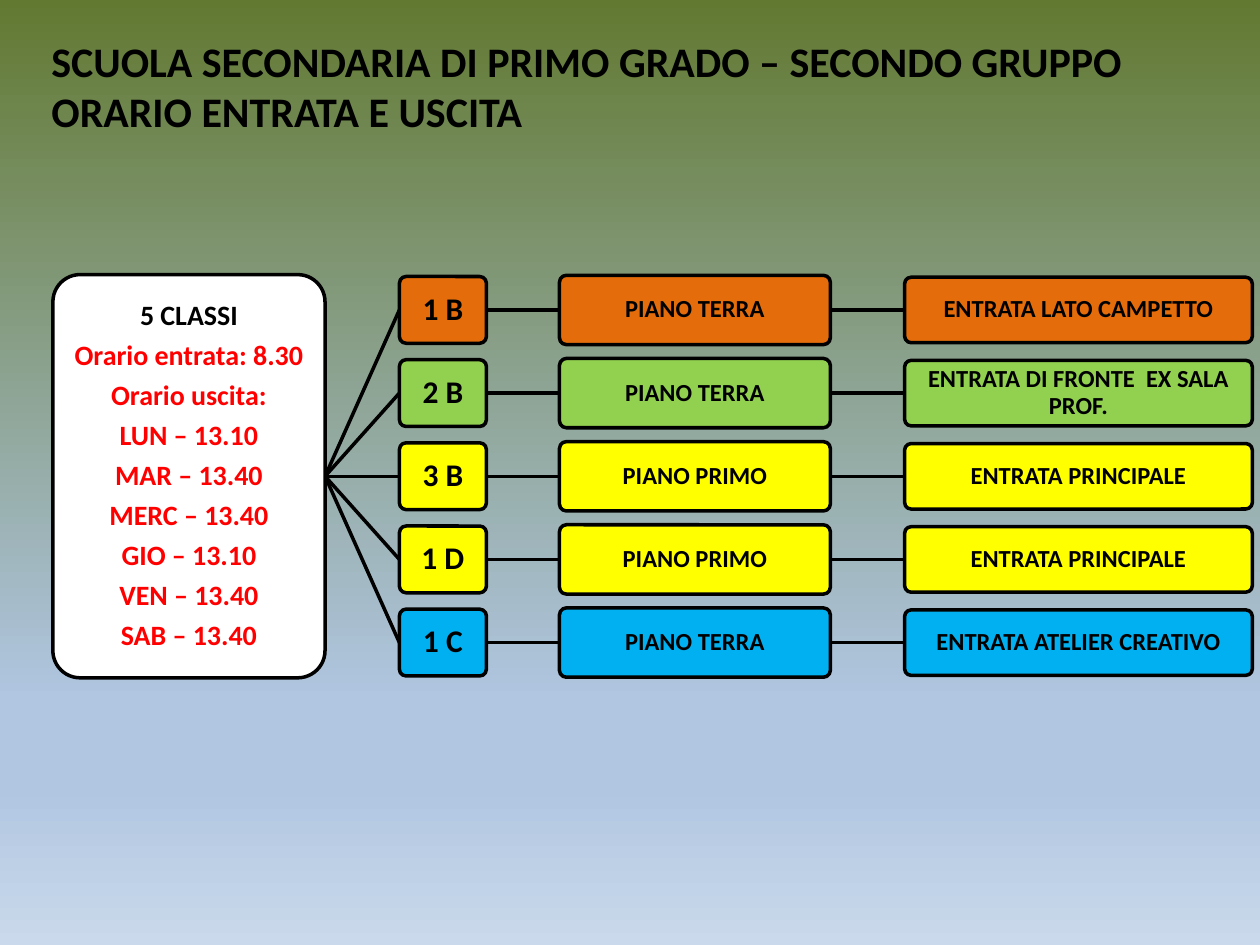
from dataclasses import dataclass
from itertools import pairwise

from lxml.etree import SubElement
from pptx import Presentation
from pptx.dml.color import RGBColor
from pptx.enum.shapes import MSO_CONNECTOR, MSO_SHAPE
from pptx.enum.text import MSO_ANCHOR, PP_ALIGN
from pptx.oxml.ns import qn
from pptx.util import Inches, Pt


@dataclass(frozen=True)
class Theme:
    """Colours, type sizes and line weight of the slide."""

    font: str = "Calibri"
    ink: str = "000000"
    accent: str = "FF0000"
    paper: str = "FFFFFF"
    orange: str = "E46C0A"
    green: str = "92D050"
    yellow: str = "FFFF00"
    blue: str = "00B0F0"
    sky: tuple = ((0, "627932"), (74, "B0C6E1"), (83, "B0C6E1"), (100, "CAD9EB"))
    title_size: int = 24
    class_size: int = 18
    summary_size: int = 16
    label_size: int = 14
    line: int = 2


@dataclass(frozen=True)
class Column:
    """Left edge, size and type size of one column of boxes."""

    left: float
    width: float
    height: float
    size: int

    @property
    def right(self):
        """Return the right edge."""
        return self.left + self.width


THEME = Theme()
MIDDLE, ROW_STEP = 3.78, 0.66
SUMMARY = Column(0.42, 2.16, 3.2, THEME.summary_size)
COLUMNS = (
    Column(3.17, 0.69, 0.53, THEME.class_size),
    Column(4.44, 2.15, 0.55, THEME.label_size),
    Column(7.18, 2.76, 0.52, THEME.label_size),
)
SCHEDULE = (
    "Orario entrata: 8.30",
    "Orario uscita:",
    "LUN – 13.10",
    "MAR – 13.40",
    "MERC – 13.40",
    "GIO – 13.10",
    "VEN – 13.40",
    "SAB – 13.40",
)
CLASSES = (
    (THEME.orange, "1 B", "PIANO TERRA", "ENTRATA LATO CAMPETTO"),
    (THEME.green, "2 B", "PIANO TERRA", "ENTRATA DI FRONTE  EX SALA PROF."),
    (THEME.yellow, "3 B", "PIANO PRIMO", "ENTRATA PRINCIPALE"),
    (THEME.yellow, "1 D", "PIANO PRIMO", "ENTRATA PRINCIPALE"),
    (THEME.blue, "1 C", "PIANO TERRA", "ENTRATA ATELIER CREATIVO"),
)


def colour(value):
    """Turn a hex value into a colour."""
    return RGBColor.from_string(value)


def paint_background(page):
    """Fill the page with the vertical gradient of the theme."""
    fill = page.background.fill
    fill.gradient()
    fill.gradient_angle = 270
    stops = next(page.element.iter(qn("a:gsLst")))
    stops.clear()
    for position, value in THEME.sky:
        stop = SubElement(stops, qn("a:gs"), pos=str(position * 1000))
        SubElement(stop, qn("a:srgbClr"), val=value)


def add_span(paragraph, text, size, ink=THEME.ink):
    """Add one bold run to a paragraph."""
    span = paragraph.add_run()
    span.text = text
    span.font.name = THEME.font
    span.font.size = Pt(size)
    span.font.bold = True
    span.font.color.rgb = colour(ink)


def add_title(page, text):
    """Add the heading at the top of the page."""
    box = page.shapes.add_textbox(Inches(0.31), Inches(0.23), Inches(9.13), Inches(0.91))
    box.text_frame.word_wrap = True
    add_span(box.text_frame.paragraphs[0], text, THEME.title_size)


def add_box(page, column, middle, fill, lines):
    """Add a rounded box centred on a height, with (text, ink) lines."""
    box = page.shapes.add_shape(
        MSO_SHAPE.ROUNDED_RECTANGLE,
        Inches(column.left),
        Inches(middle - column.height / 2),
        Inches(column.width),
        Inches(column.height),
    )
    box.adjustments[0] = 0.1
    box.shadow.inherit = False
    box.fill.solid()
    box.fill.fore_color.rgb = colour(fill)
    box.line.color.rgb = colour(THEME.ink)
    box.line.width = Pt(THEME.line)
    frame = box.text_frame
    frame.word_wrap = True
    frame.vertical_anchor = MSO_ANCHOR.MIDDLE
    frame.margin_left = frame.margin_right = Inches(0.01)
    frame.margin_top = frame.margin_bottom = Inches(0.01)
    for index, (text, ink) in enumerate(lines):
        paragraph = frame.add_paragraph() if index else frame.paragraphs[0]
        paragraph.alignment = PP_ALIGN.CENTER
        paragraph.line_spacing = 0.9
        paragraph.space_after = Pt(0.35 * column.size)
        add_span(paragraph, text, column.size, ink)


def add_link(page, start, end):
    """Join two points with a straight line."""
    link = page.shapes.add_connector(MSO_CONNECTOR.STRAIGHT, *map(Inches, start + end))
    link.line.color.rgb = colour(THEME.ink)
    link.line.width = Pt(THEME.line)
    SubElement(link.element.spPr, qn("a:effectLst"))


def add_class_row(page, middle, fill, labels):
    """Add the boxes of one class and the lines that lead to them."""
    add_link(page, (SUMMARY.right, MIDDLE), (COLUMNS[0].left, middle))
    for before, after in pairwise(COLUMNS):
        add_link(page, (before.right, middle), (after.left, middle))
    for column, label in zip(COLUMNS, labels):
        add_box(page, column, middle, fill, [(label, THEME.ink)])


def main():
    """Build and save the deck."""
    deck = Presentation()
    deck.slide_width, deck.slide_height = Inches(10), Inches(7.5)
    page = deck.slides.add_slide(deck.slide_layouts[6])
    paint_background(page)
    add_title(page, "SCUOLA SECONDARIA DI PRIMO GRADO – SECONDO GRUPPO ORARIO ENTRATA E USCITA")
    first = MIDDLE - ROW_STEP * (len(CLASSES) - 1) / 2
    for row, (fill, *labels) in enumerate(CLASSES):
        add_class_row(page, first + row * ROW_STEP, fill, labels)
    lines = [("5 CLASSI", THEME.ink)] + [(text, THEME.accent) for text in SCHEDULE]
    add_box(page, SUMMARY, MIDDLE, THEME.paper, lines)
    deck.save("out.pptx")


if __name__ == "__main__":
    main()
